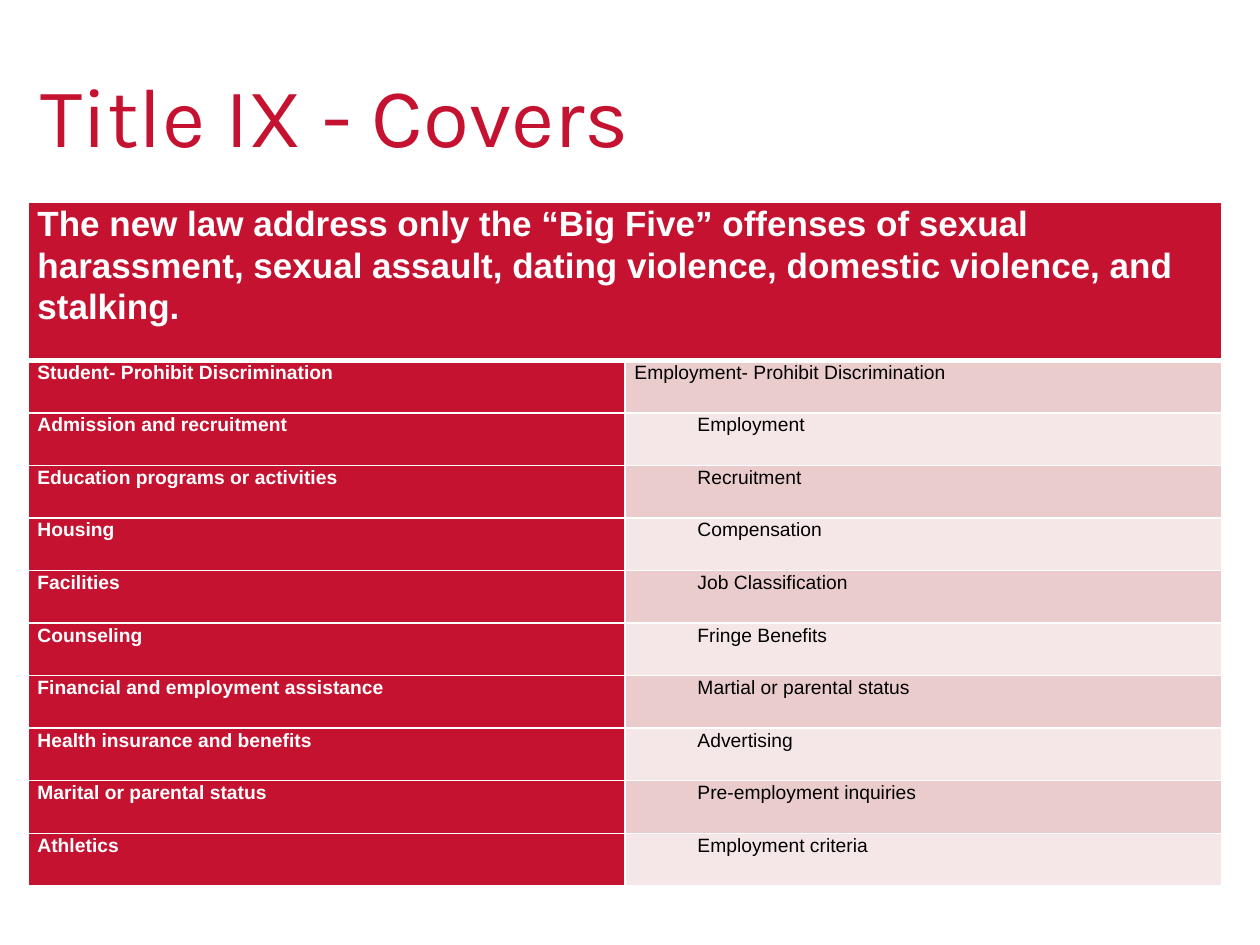
from lxml import etree
from pptx import Presentation
from pptx.dml.color import RGBColor
from pptx.enum.text import MSO_ANCHOR
from pptx.oxml.ns import qn
from pptx.util import Pt

MIDDLE = MSO_ANCHOR.MIDDLE
TOP = MSO_ANCHOR.TOP

RED, WHITE, BLACK = "C41230", "FFFFFF", "000000"
BANDS = ("EACCCD", "F5E7E8")

LEFT = 16
TABLE_TOP, TABLE_WIDTH = 115.4, 682.4
BANNER_HEIGHT, ROW_HEIGHT = 90.6, 30.04
EMPLOYMENT_INDENT = 36

BANNER = ("The new law address only the “Big Five” offenses of sexual harassment, "
          "sexual assault, dating violence, domestic violence, and stalking.")
COVERAGE = [
    ("Student- Prohibit Discrimination", "Employment- Prohibit Discrimination"),
    ("Admission and recruitment", "Employment"),
    ("Education programs or activities", "Recruitment"),
    ("Housing", "Compensation"),
    ("Facilities", "Job Classification"),
    ("Counseling", "Fringe Benefits"),
    ("Financial and employment assistance", "Martial or parental status"),
    ("Health insurance and benefits", "Advertising"),
    ("Marital or parental status", "Pre-employment inquiries"),
    ("Athletics", "Employment criteria"),
]


def rgb(hex_color):
    return RGBColor.from_string(hex_color)


def style_font(paragraph, name, size, color, bold=False):
    font = paragraph.font
    font.name, font.size, font.bold = name, Pt(size), bold
    font.color.rgb = rgb(color)


def add_title(slide, text):
    title = slide.shapes.add_textbox(Pt(LEFT), Pt(26), Pt(647), Pt(78))
    frame = title.text_frame
    frame.word_wrap = True
    frame.vertical_anchor = MIDDLE
    frame.text = text
    style_font(frame.paragraphs[0], "Karla", 48, RED)


def set_borders(cell, top=1, bottom=1):
    """Draw white rules on all four sides, placed before the cell's fill."""
    properties = cell._tc.get_or_add_tcPr()
    widths = {"lnL": 1, "lnR": 1, "lnT": top, "lnB": bottom}
    for position, (side, width) in enumerate(widths.items()):
        line = etree.Element(qn(f"a:{side}"), w=str(Pt(width)))
        fill = etree.SubElement(line, qn("a:solidFill"))
        etree.SubElement(fill, qn("a:srgbClr"), val=WHITE)
        properties.insert(position, line)


def fill_cell(cell, text, size, color, background, bold=False, indent=0):
    cell.margin_left = cell.margin_right = Pt(5.4)
    cell.margin_top = cell.margin_bottom = 0
    cell.vertical_anchor = TOP
    cell.fill.solid()
    cell.fill.fore_color.rgb = rgb(background)
    cell.text = text
    paragraph = cell.text_frame.paragraphs[0]
    paragraph.line_spacing = 1.07
    if indent:
        paragraph._p.get_or_add_pPr().set("marL", str(Pt(indent)))
    style_font(paragraph, "Arial", size, color, bold)


def add_coverage_table(slide):
    row_count = len(COVERAGE) + 1
    height = BANNER_HEIGHT + ROW_HEIGHT * len(COVERAGE)
    table = slide.shapes.add_table(row_count, 2, Pt(LEFT), Pt(TABLE_TOP),
                                   Pt(TABLE_WIDTH), Pt(height)).table
    for column in table.columns:
        column.width = Pt(TABLE_WIDTH / 2)
    for row in table.rows:
        row.height = Pt(ROW_HEIGHT)
    table.rows[0].height = Pt(BANNER_HEIGHT)

    # Banner across both columns
    banner = table.cell(0, 0)
    banner.merge(table.cell(0, 1))
    fill_cell(banner, BANNER, 20, WHITE, RED, bold=True)
    for column in range(2):
        set_borders(table.cell(0, column), bottom=3)

    # Student and employment columns
    for index, (student, employment) in enumerate(COVERAGE):
        student_cell, employment_cell = table.rows[index + 1].cells
        fill_cell(student_cell, student, 11, WHITE, RED, bold=True)
        fill_cell(employment_cell, employment, 11, BLACK, BANDS[index % 2],
                  indent=EMPLOYMENT_INDENT if index else 0)
        for cell in (student_cell, employment_cell):
            set_borders(cell, top=1 if index else 3)


def main():
    presentation = Presentation()
    presentation.slide_width, presentation.slide_height = Pt(720), Pt(540)
    slide = presentation.slides.add_slide(presentation.slide_layouts[6])
    add_title(slide, "Title IX - Covers")
    add_coverage_table(slide)
    presentation.save("out.pptx")


if __name__ == "__main__":
    main()
